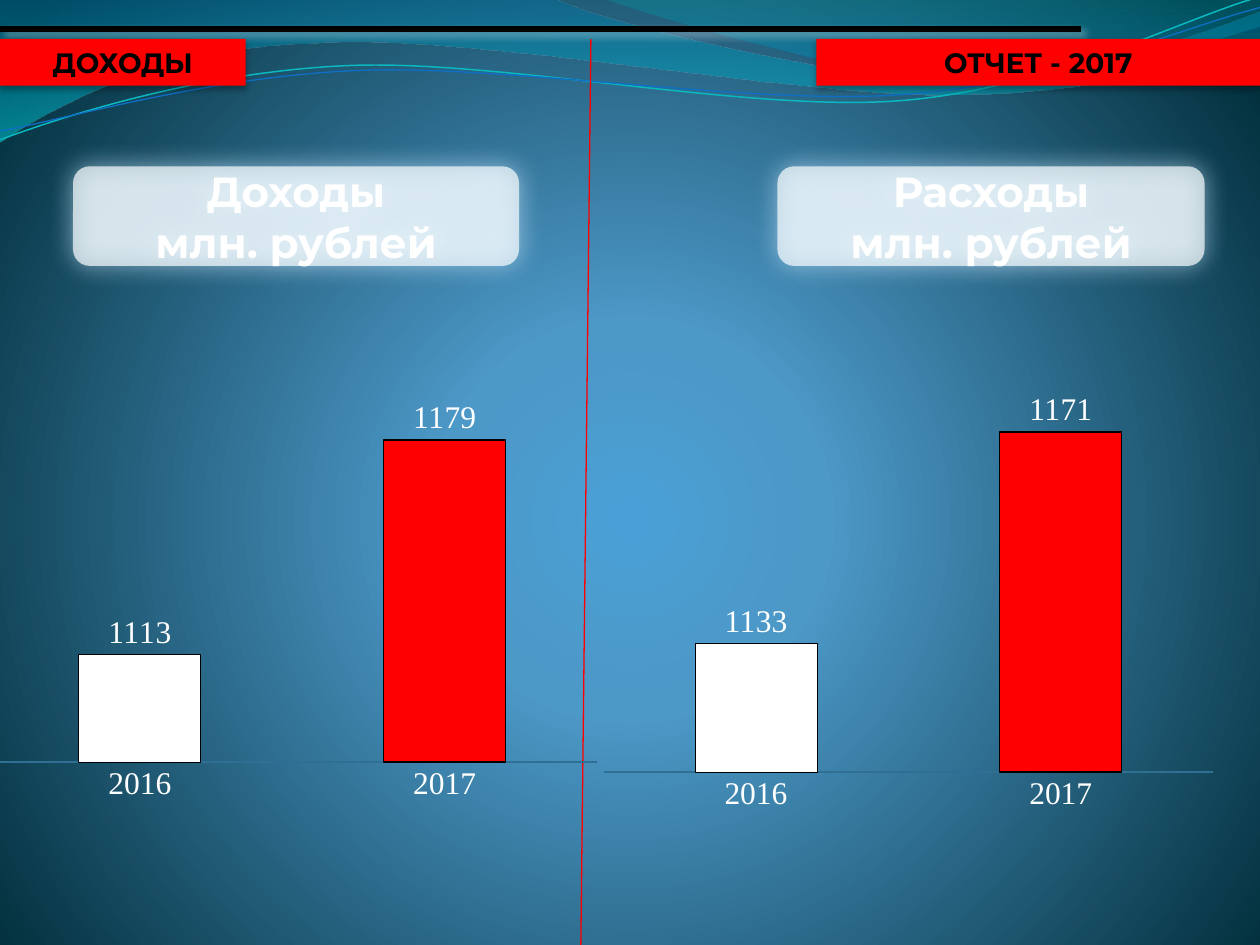
from dataclasses import dataclass
from math import cos, radians, sin
from typing import Optional

from lxml.etree import SubElement
from pptx import Presentation
from pptx.chart.data import CategoryChartData
from pptx.dml.color import RGBColor
from pptx.enum.chart import XL_CHART_TYPE as ChartType, XL_LABEL_POSITION as LabelPos
from pptx.enum.chart import XL_TICK_MARK as TickMark
from pptx.enum.shapes import MSO_CONNECTOR as Connector, MSO_SHAPE as Shape
from pptx.enum.text import MSO_ANCHOR as Anchor, PP_ALIGN as Align
from pptx.oxml import parse_xml
from pptx.oxml.ns import nsdecls, qn
from pptx.util import Inches, Pt

BLACK, WHITE = RGBColor(0, 0, 0), RGBColor(255, 255, 255)
RED = RGBColor(255, 0, 0)
PANEL = RGBColor(0xF8, 0xFD, 0xFE)
PANEL_GLOW = RGBColor(0xC8, 0xE3, 0xFB)
TEAL, BLUE = RGBColor(0x0A, 0xB8, 0xBF), RGBColor(0x0F, 0x6F, 0xC6)
AXIS = RGBColor(0x2F, 0x6F, 0x93)
HEADING_FONT, CHART_FONT, LABEL_FONT = "Montserrat", "Cambria", "Times New Roman"

# The slide is a grid of 100 columns and 75 rows
COLUMNS, ROWS = 100, 75
CELL = Inches(0.1)


def grid(*cells: float) -> list[int]:
    return [round(cell * CELL) for cell in cells]


@dataclass
class Shadow:
    color: RGBColor
    alpha: float
    blur: float
    distance: float
    angle: float


@dataclass
class Box:
    text: str
    area: tuple  # column, row, columns, rows
    kind: Shape
    fill: RGBColor
    ink: RGBColor
    size: int
    shadow: Shadow
    inset: float
    alpha: int = 100


@dataclass
class YearChart:
    area: tuple
    values: tuple
    axis_range: tuple


@dataclass
class Wave:
    start: tuple
    segments: list  # one point for a straight edge, three for a curve
    stops: tuple = ()  # position, colour, opacity
    line: Optional[RGBColor] = None
    width: float = 0.75
    tilt: float = 0  # degrees
    center: tuple = (0, 0)  # the point it is tilted about


def gradient(stops: tuple, direction: str):
    marks = ""
    for position, color, opacity in stops:
        alpha = f'<a:alpha val="{opacity * 1000}"/>' if opacity < 100 else ""
        marks += f'<a:gs pos="{position * 1000}"><a:srgbClr val="{color}">{alpha}</a:srgbClr></a:gs>'
    return parse_xml(f'<a:gradFill {nsdecls("a")} rotWithShape="1"><a:gsLst>{marks}</a:gsLst>'
                     f"{direction}</a:gradFill>")


def set_gradient(fill, owner, stops: tuple, direction: str) -> None:
    fill.gradient()
    plain = next(owner.iter(qn("a:gradFill")))
    plain.getparent().replace(plain, gradient(stops, direction))


def set_shadow(shape, shadow: Optional[Shadow]) -> None:
    properties = shape.element.spPr
    effects = properties.find(qn("a:effectLst"))
    if effects is None:
        effects = SubElement(properties, qn("a:effectLst"))
    if shadow:
        outer = SubElement(effects, qn("a:outerShdw"), blurRad=str(Pt(shadow.blur)),
                           dist=str(Pt(shadow.distance)), dir=str(round(shadow.angle * 60000)),
                           algn="ctr", rotWithShape="0")
        color = SubElement(outer, qn("a:srgbClr"), val=str(shadow.color))
        SubElement(color, qn("a:alpha"), val=str(round(shadow.alpha * 1000)))


def turn(point: tuple, center: tuple, degrees: float) -> tuple:
    angle = radians(degrees)
    x, y = point[0] - center[0], point[1] - center[1]
    return (center[0] + x * cos(angle) - y * sin(angle),
            center[1] + x * sin(angle) + y * cos(angle))


def add_wave(slide, wave: Wave) -> None:
    outline = [wave.start] + [point for segment in wave.segments for point in segment]
    points = [grid(*turn(point, wave.center, -wave.tilt)) for point in outline]
    builder = slide.shapes.build_freeform(*points[0])
    builder.add_line_segments(points[1:], close=bool(wave.stops))
    ribbon = builder.convert_to_shape()
    ribbon.rotation = wave.tilt

    # Join each three edges of a curved segment into one Bézier curve
    edges = iter(list(ribbon.element.iter(qn("a:lnTo"))))
    for segment in wave.segments:
        group = [next(edges) for _ in segment]
        if len(group) == 3:
            curve = group[0].makeelement(qn("a:cubicBezTo"))
            group[0].addprevious(curve)
            for edge in group:
                curve.append(edge[0])
                edge.getparent().remove(edge)

    ribbon.shadow.inherit = False
    if wave.stops:
        set_gradient(ribbon.fill, ribbon.element, wave.stops, '<a:lin ang="5400000" scaled="0"/>')
        ribbon.line.fill.background()
    else:
        ribbon.fill.background()
        ribbon.line.color.rgb = wave.line
        ribbon.line.width = Pt(wave.width)


def add_box(slide, box: Box) -> None:
    shape = slide.shapes.add_shape(box.kind, *grid(*box.area))
    shape.fill.solid()
    shape.fill.fore_color.rgb = box.fill
    if box.alpha < 100:
        color = next(shape.element.spPr.iter(qn("a:srgbClr")))
        SubElement(color, qn("a:alpha"), val=str(box.alpha * 1000))
    shape.line.fill.background()
    shape.shadow.inherit = False
    set_shadow(shape, box.shadow)
    frame = shape.text_frame
    frame.text = box.text
    frame.vertical_anchor = Anchor.MIDDLE
    frame.margin_left = frame.margin_right = Inches(box.inset)
    frame.margin_top = frame.margin_bottom = Inches(box.inset / 2)
    for paragraph in frame.paragraphs:
        paragraph.alignment = Align.CENTER
        font = paragraph.runs[0].font
        font.name, font.size, font.bold = HEADING_FONT, Pt(box.size), True
        font.color.rgb = box.ink


def add_rule(slide, start: tuple, end: tuple, color: RGBColor, width: float,
             shadow: Optional[Shadow] = None) -> None:
    rule = slide.shapes.add_connector(Connector.STRAIGHT, *grid(*start, *end))
    rule.line.color.rgb = color
    rule.line.width = Pt(width)
    set_shadow(rule, shadow)


def add_year_chart(slide, year_chart: YearChart) -> None:
    data = CategoryChartData()
    data.categories = ["2016", "2017"]
    data.add_series("Series 1", year_chart.values)
    chart = slide.shapes.add_chart(ChartType.COLUMN_CLUSTERED, *grid(*year_chart.area), data).chart
    chart.has_legend = chart.has_title = False
    chart.font.name, chart.font.size = CHART_FONT, Pt(18)
    chart.font.color.rgb = WHITE

    years, amounts = chart.category_axis, chart.value_axis
    years.major_tick_mark = TickMark.NONE
    years.format.line.color.rgb = AXIS
    amounts.minimum_scale, amounts.maximum_scale = year_chart.axis_range
    amounts.has_major_gridlines = amounts.visible = False

    plot = chart.plots[0]
    plot.gap_width, plot.vary_by_categories = 150, False
    bars = plot.series[0]
    bars.format.fill.solid()
    bars.format.fill.fore_color.rgb = BLUE
    for index, (color, outline) in enumerate([(WHITE, 0.5), (RED, 0.75)]):
        bar = bars.points[index].format
        bar.fill.solid()
        bar.fill.fore_color.rgb = color
        bar.line.color.rgb = BLACK
        bar.line.width = Pt(outline)
    labels = bars.data_labels
    labels.show_value, labels.position = True, LabelPos.OUTSIDE_END
    for font in (years.tick_labels.font, labels.font):
        font.name, font.size = LABEL_FONT, Pt(18)
        font.color.rgb = WHITE

    # Fix the inner plot area as shares of the chart
    area = chart.element.chart.plotArea
    for old in area.findall(qn("c:layout")):
        area.remove(old)
    shares = "".join(f'<c:{key} val="{share}"/>' for key, share in
                     (("x", 0.02), ("y", 0.02), ("w", 0.96), ("h", 7 / 8)))
    area.insert(0, parse_xml(
        f'<c:layout {nsdecls("c")}><c:manualLayout><c:layoutTarget val="inner"/>'
        f'<c:xMode val="edge"/><c:yMode val="edge"/>{shares}</c:manualLayout></c:layout>'))


WAVES = [
    Wave((0, 0), [[(44, -0.1)], ((47.6, 1.7), (66.4, 6.3), (75.8, 6.3)),
                  ((85.3, 6.3), (95.8, 2.6), (100, 0.9)), [(100.1, 3.6)],
                  ((98.3, 4.4), (87, 7.6), (74.6, 7.5)), ((62.2, 7.5), (38.2, 2.8), (25.7, 3.4)),
                  ((12.9, 3.6), (4.6, 8.3), (-0.1, 11.3))],
         stops=((0, "0074A1", 45), (100, "00C6CF", 55))),
    Wave((47.9, -0.1), [((50.9, 1.1), (68.2, 6.2), (76.9, 6.5)),
                        ((85.6, 6.9), (96.1, 3.2), (100, 2.1)), [(100, 0)]],
         stops=((0, "00A1A9", 30), (80, "008BBF", 45))),
    Wave((0, 11.1), [((4.8, 9.3), (15.8, 5.7), (27.7, 5.2)), ((39.5, 4.7), (59.3, 8.9), (71.3, 8)),
                     ((83.3, 7.1), (93.8, 1.5), (99.8, -0.2))],
         line=TEAL, width=0.85, tilt=-2.7, center=(49.9, 5.75)),
    Wave((0, 10.4), [((4.7, 9.6), (16.4, 6.1), (28.3, 5.6)),
                     ((40.3, 5.1), (59.7, 8.4), (71.7, 7.5)),
                     ((83.6, 6.7), (94.1, 2.1), (100, 0.6))],
         line=BLUE, tilt=-2.7, center=(49.95, 5.9)),
]
GLOW = Shadow(PANEL_GLOW, 90, 15, 0, 45)
TAG_SHADOW = Shadow(BLACK, 32, 3.5, 2.2, 90)
RULE_SHADOW = Shadow(WHITE, 40, 4, 3, 45)
PANELS = [Box(f"{topic}\nмлн. рублей", (column, 13.2, columns, 7.9), Shape.DOUBLE_BRACKET,
              PANEL, WHITE, 24, GLOW, 0, alpha=70)
          for topic, column, columns in (("Доходы", 5.8, 35.4), ("Расходы", 61.7, 33.9))]
TAGS = [Box(label, (column, 3.1, columns, 3.7), Shape.RECTANGLE, RED, BLACK, 16, TAG_SHADOW, 0.1)
        for label, column, columns in (("ОТЧЕТ - 2017", 64.8, 35.2), ("ДОХОДЫ", 0, 19.5))]
CHARTS = [YearChart((-2, 28.8, 50.4, 35.4), (1113, 1179), (1080, 1200)),
          YearChart((46.9, 29.6, 50.4, 35.4), (1133, 1171), (1110, 1180))]


def main() -> None:
    deck = Presentation()
    deck.slide_width, deck.slide_height = grid(COLUMNS, ROWS)
    slide = deck.slides.add_slide(deck.slide_layouts[6])

    # Background and waves
    set_gradient(slide.background.fill, slide.element,
                 ((0, "4AA0D6", 100), (25, "4C98C7", 100), (100, "002C38", 100)),
                 '<a:path path="circle"><a:fillToRect l="10000" t="110000" r="10000" b="100000"/>'
                 "</a:path>")
    for wave in WAVES:
        add_wave(slide, wave)

    # Headings, rules and charts
    for panel in PANELS:
        add_box(slide, panel)
    add_rule(slide, (0, 2.3), (85.8, 2.3), BLACK, 3, RULE_SHADOW)
    for tag in TAGS:
        add_box(slide, tag)
    add_rule(slide, (46.9, 3.1), (46.1, ROWS), RED, 0.75)
    for year_chart in CHARTS:
        add_year_chart(slide, year_chart)
    deck.save("out.pptx")


if __name__ == "__main__":
    main()
